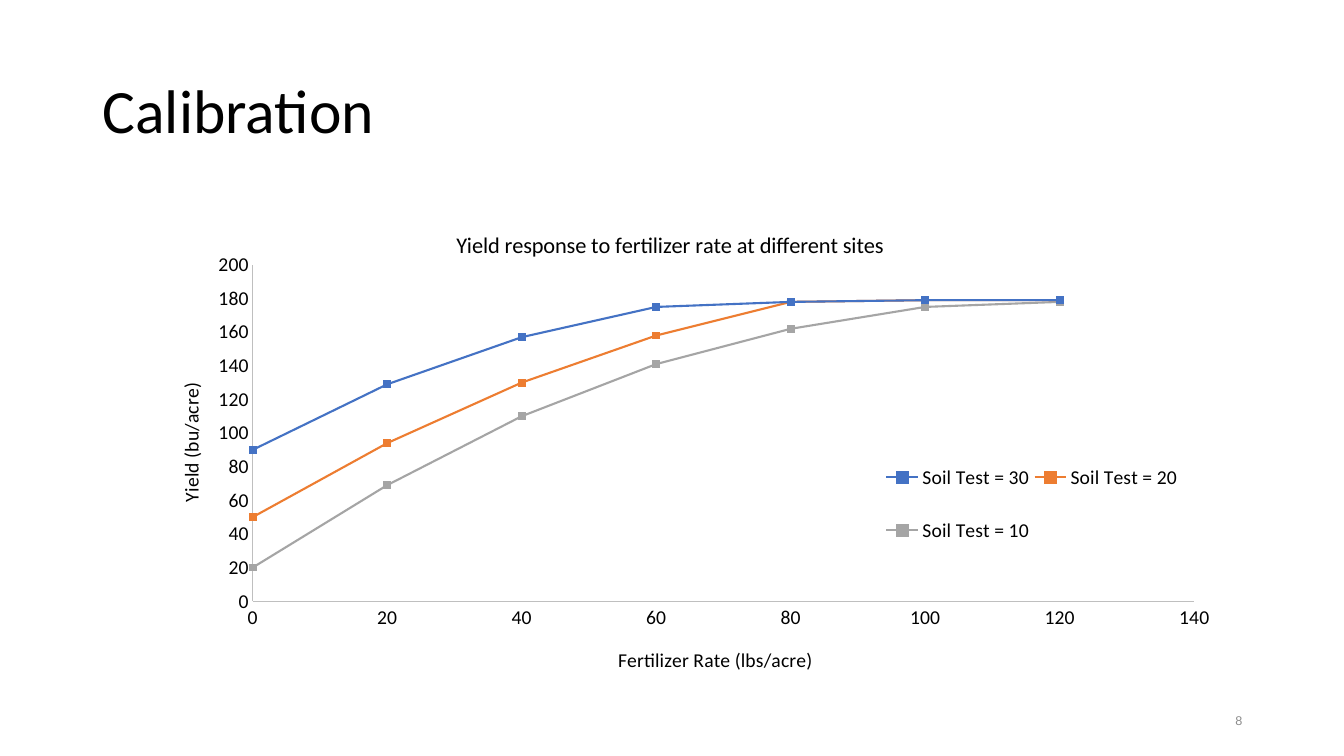
"""Build the Calibration slide with its yield response chart."""
import pptx
import pptx.chart.data
import pptx.dml.color
import pptx.enum.chart
import pptx.enum.text
import pptx.oxml
import pptx.oxml.ns
import pptx.util

Inches = pptx.util.Inches
Pt = pptx.util.Pt
RGBColor = pptx.dml.color.RGBColor

BLACK = RGBColor(0x00, 0x00, 0x00)
GREY = RGBColor(0x8C, 0x8C, 0x8C)
AXIS_GREY = RGBColor(0xBF, 0xBF, 0xBF)
BLUE = RGBColor(0x44, 0x72, 0xC4)
ORANGE = RGBColor(0xED, 0x7D, 0x31)
SILVER = RGBColor(0xA5, 0xA5, 0xA5)

HEADING = "Calibration"
PAGE_NUMBER = "8"
CHART_TITLE = "Yield response to fertilizer rate at different sites"
RATE_TITLE = "Fertilizer Rate (lbs/acre)"
YIELD_TITLE = "Yield (bu/acre)"
RATES = range(0, 121, 20)
SITES = [
    ("Soil Test = 30", BLUE, (90, 129, 157, 175, 178, 179, 179)),
    ("Soil Test = 20", ORANGE, (50, 94, 130, 158, 178, 179, 179)),
    ("Soil Test = 10", SILVER, (20, 69, 110, 141, 162, 175, 178)),
]
LEFT, WIDTH = 0.92, 11.5


def style_font(font, size, name="Calibri", color=BLACK):
    font.size = Pt(size)
    font.name = name
    font.bold = False
    font.color.rgb = color


def add_text(page, text, area, size, name, color, align):
    box = page.shapes.add_textbox(*map(Inches, area))
    frame = box.text_frame
    frame.word_wrap = True
    frame.vertical_anchor = pptx.enum.text.MSO_ANCHOR.MIDDLE
    para = frame.paragraphs[0]
    para.text = text
    para.alignment = align
    style_font(para.font, size, name, color)
    return para


def set_title(owner, text, size):
    owner.text_frame.text = text
    style_font(owner.text_frame.paragraphs[0].font, size)


def place(element, index, inner=False, **fractions):
    for old in element.xpath("./c:layout"):
        element.remove(old)
    target = '<c:layoutTarget val="inner"/>' if inner else ""
    modes = "".join(f'<c:{side}Mode val="edge"/>' for side in "xy")
    values = "".join(f'<c:{key} val="{value}"/>' for key, value in fractions.items())
    element.insert(index, pptx.oxml.parse_xml(
        f'<c:layout {pptx.oxml.ns.nsdecls("c")}><c:manualLayout>'
        f"{target}{modes}{values}</c:manualLayout></c:layout>"))


def style_axis(axis, title, maximum):
    axis.minimum_scale, axis.maximum_scale, axis.major_unit = 0, maximum, 20
    axis.has_major_gridlines = False
    axis.major_tick_mark = axis.minor_tick_mark = pptx.enum.chart.XL_TICK_MARK.NONE
    axis.format.line.color.rgb = AXIS_GREY
    axis.format.line.width = Pt(0.75)
    style_font(axis.tick_labels.font, 14)
    set_title(axis.axis_title, title, 14)


def add_yield_chart(page):
    data = pptx.chart.data.XyChartData()
    for name, color, yields in SITES:
        series = data.add_series(name)
        for rate, amount in zip(RATES, yields):
            series.add_data_point(rate, amount)
    chart = page.shapes.add_chart(
        pptx.enum.chart.XL_CHART_TYPE.XY_SCATTER_SMOOTH,
        Inches(LEFT), Inches(2), Inches(WIDTH), Inches(4.76), data).chart
    style_font(chart.font, 14)
    chart.has_title = True
    set_title(chart.chart_title, CHART_TITLE, 16)
    style_axis(chart.category_axis, RATE_TITLE, 140)
    style_axis(chart.value_axis, YIELD_TITLE, 200)

    plot = chart.plots[0]
    plot.vary_by_categories = False
    for series, (name, color, yields) in zip(plot.series, SITES):
        series.smooth = True
        series.format.line.color.rgb = color
        series.format.line.width = Pt(1.5)
        marker = series.marker
        marker.style = pptx.enum.chart.XL_MARKER_STYLE.SQUARE
        marker.size = 5
        marker.format.fill.solid()
        marker.format.fill.fore_color.rgb = color
        marker.format.line.color.rgb = color

    chart.has_legend = True
    chart.legend.position = pptx.enum.chart.XL_LEGEND_POSITION.TOP
    chart.legend.include_in_layout = True
    style_font(chart.legend.font, 14)

    heading, rate_title, yield_title = chart.element.xpath(".//c:title")
    yield_title.xpath(".//a:bodyPr")[0].set("rot", "-5400000")
    place(heading, 1, x=0.31, y=0.05)
    place(rate_title, 1, x=0.45, y=0.92)
    place(yield_title, 1, x=0.07, y=0.37)
    place(chart.element.xpath(".//c:plotArea")[0], 0, inner=True,
          x=0.138, y=0.132, w=0.812, h=0.701)
    place(chart.element.xpath(".//c:legend")[0], 1, x=0.68, y=0.49, w=0.26, h=0.28)


def main():
    deck = pptx.Presentation()
    deck.slide_width, deck.slide_height = Inches(13.33), Inches(7.5)
    page = deck.slides.add_slide(deck.slide_layouts[6])
    align = pptx.enum.text.PP_ALIGN
    title = add_text(page, HEADING, (LEFT, 0.4, WIDTH, 1.45), 44, "Calibri", BLACK, align.LEFT)
    title.line_spacing = 0.9
    add_yield_chart(page)
    add_text(page, PAGE_NUMBER, (9.42, 6.95, 3, 0.4), 9, "Arial", GREY, align.RIGHT)
    deck.save("out.pptx")


if __name__ == "__main__":
    main()
